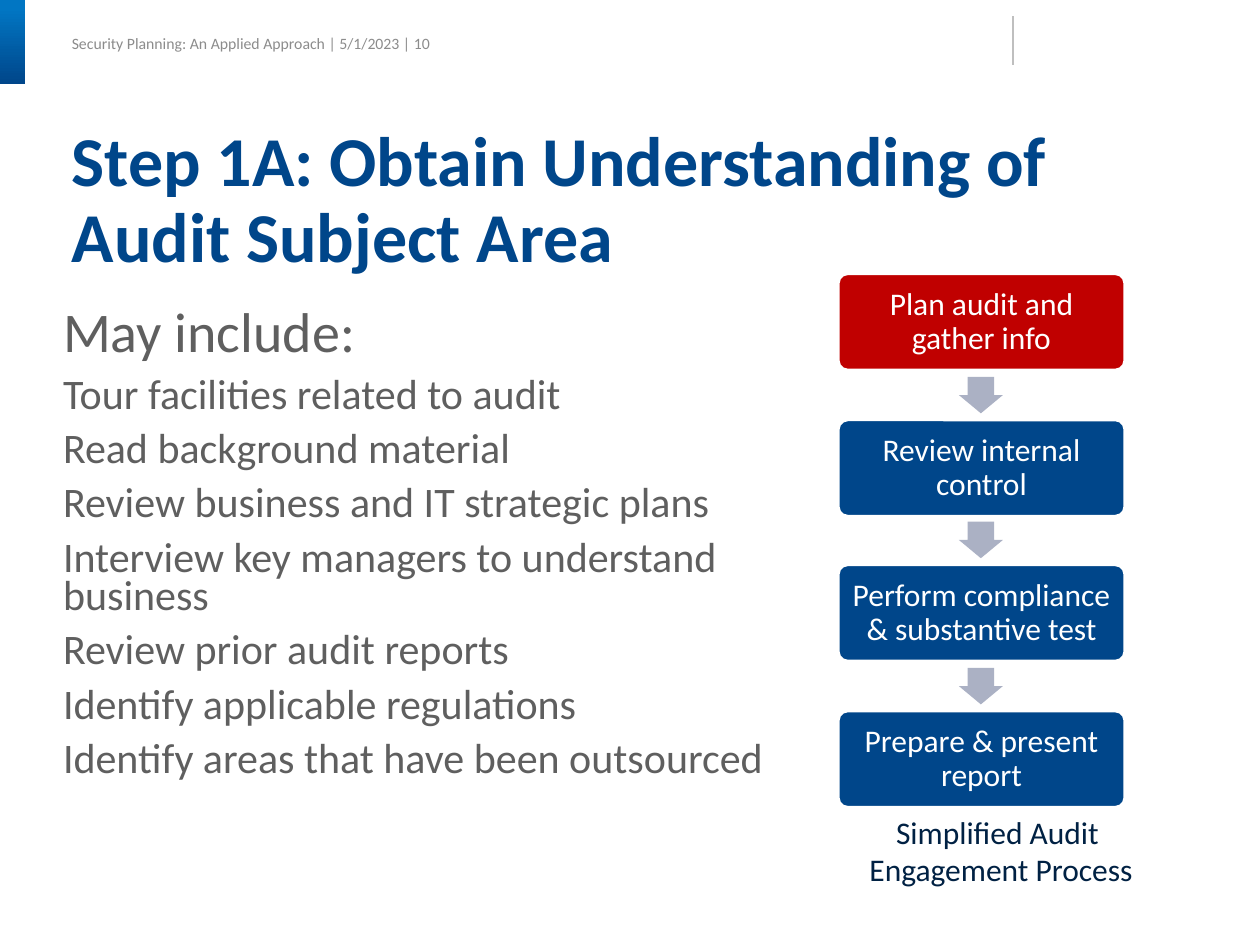
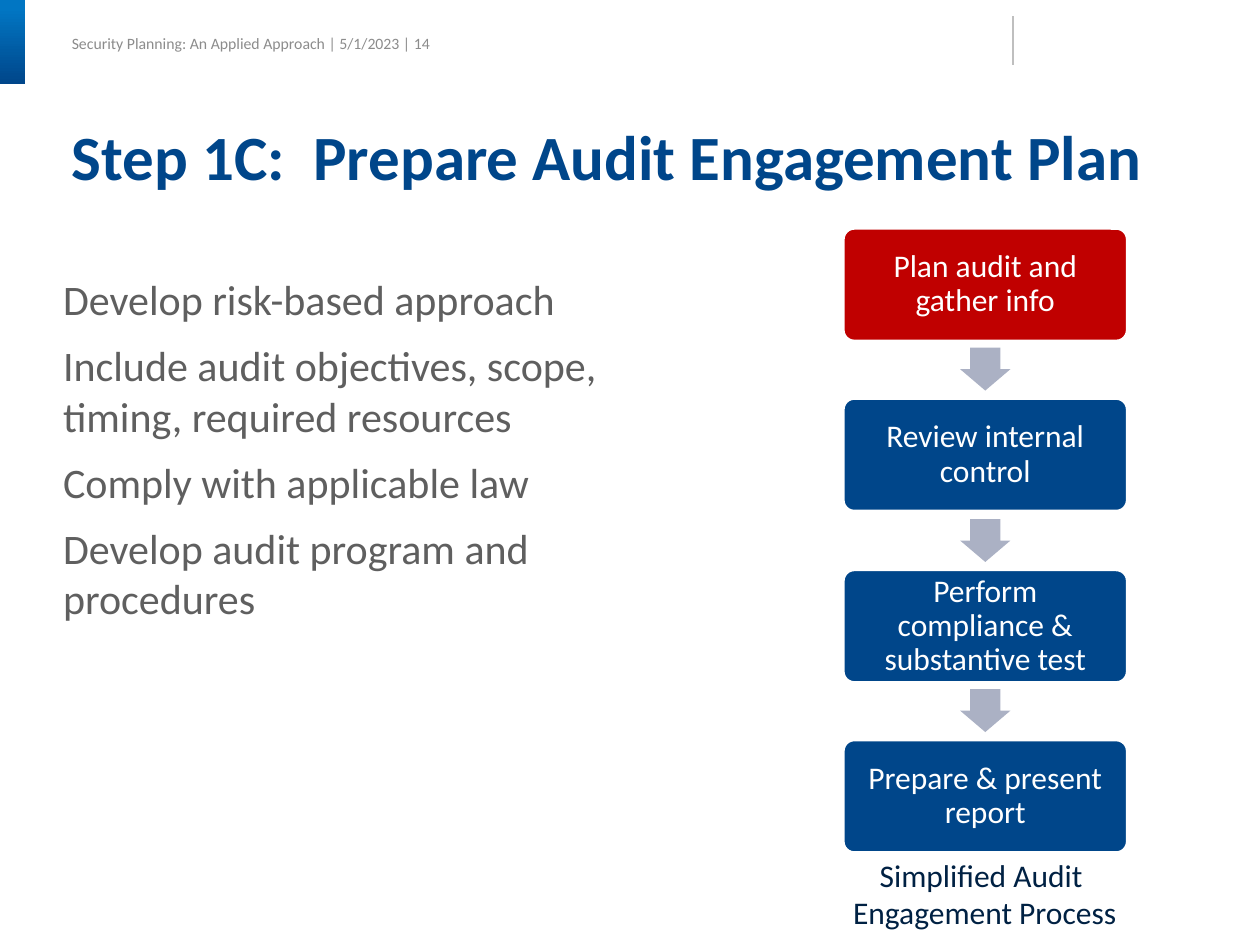
import dataclasses
import typing

import lxml.etree
import pptx
import pptx.dml.color
import pptx.enum.shapes
import pptx.enum.text
import pptx.oxml.ns
import pptx.slide
import pptx.text.text
import pptx.util

PX = 9144
FONT = "Calibri"
NAVY = "00468A"
SKY = "0176C3"
RED = "C00000"
STEEL = "ABB1C4"
GREY = "5F5F5F"
PALE = "8C8C8C"
RULE = "BFBFBF"
INK = "002143"
WHITE = "FFFFFF"
STEPS = (
    "Plan audit and gather info",
    "Review internal control",
    "Perform compliance & substantive test",
    "Prepare & present report",
)
KIND = pptx.enum.shapes.MSO_SHAPE
ALIGN = pptx.enum.text.PP_ALIGN
ANCHOR = pptx.enum.text.MSO_ANCHOR


class Box(typing.NamedTuple):
    left: int
    top: int
    width: int
    height: int

    def emu(self) -> list[int]:
        return [side * PX for side in self]


@dataclasses.dataclass(frozen=True)
class Flow:
    first: Box
    last: int
    label: Box


@dataclasses.dataclass(frozen=True)
class Page:
    number: int
    title: str
    size: int
    body: Box
    points: tuple[str, ...]
    flow: Flow
    lead: int = 24
    pitch: int | None = None


PAGES = (
    Page(
        10,
        "Step 1A: Obtain Understanding of Audit Subject Area",
        40,
        Box(50, 258, 558, 383),
        (
            "May include:",
            "Tour facilities related to audit",
            "Read background material",
            "Review business and IT strategic plans",
            "Interview key managers to understand business",
            "Review prior audit reports",
            "Identify applicable regulations",
            "Identify areas that have been outsourced",
        ),
        Flow(Box(665, 217, 228, 77), 564, Box(607, 645, 375, 100)),
        lead=32,
        pitch=22,
    ),
    Page(
        14,
        "Step 1C:  Prepare Audit Engagement Plan",
        36,
        Box(50, 217, 442, 425),
        (
            "Develop risk-based approach",
            "Include audit objectives, scope, timing, required resources",
            "Comply with applicable law",
            "Develop audit program and procedures",
        ),
        Flow(Box(669, 181, 226, 90), 587, Box(594, 679, 375, 100)),
    ),
)


def tint(code: str) -> pptx.dml.color.RGBColor:
    return pptx.dml.color.RGBColor.from_string(code)


def write(
    frame: pptx.text.text.TextFrame,
    *lines: str,
    size: int,
    color: str,
    lead: int | None = None,
    bold: bool = False,
    align: ALIGN = ALIGN.LEFT,
    anchor: ANCHOR = ANCHOR.TOP,
    inset: int = 0,
    wrap: bool = True,
    pitch: float | pptx.util.Pt | None = None,
    before: int = 0,
) -> None:
    frame.auto_size = pptx.enum.text.MSO_AUTO_SIZE.NONE
    frame.word_wrap = wrap
    frame.vertical_anchor = anchor
    frame.margin_left = frame.margin_right = inset * PX
    frame.margin_top = frame.margin_bottom = inset * PX
    for index, line in enumerate(lines):
        para = frame.add_paragraph() if index else frame.paragraphs[0]
        para.alignment = align
        para.line_spacing = pitch
        para.space_before = pptx.util.Pt(before)
        run = para.add_run()
        run.text = line
        run.font.name = FONT
        run.font.size = pptx.util.Pt(size if index or lead is None else lead)
        run.font.bold = bold
        run.font.color.rgb = tint(color)


def add_text(slide: pptx.slide.Slide, box: Box, *lines: str, **style: typing.Any) -> None:
    write(slide.shapes.add_textbox(*box.emu()).text_frame, *lines, **style)


def add_form(slide: pptx.slide.Slide, kind: KIND, box: Box, fill: str):
    shape = slide.shapes.add_shape(kind, *box.emu())
    shape.shadow.inherit = False
    shape.fill.solid()
    shape.fill.fore_color.rgb = tint(fill)
    shape.line.fill.background()
    return shape


def add_head(slide: pptx.slide.Slide, number: int) -> None:
    add_text(
        slide,
        Box(57, 23, 284, 23),
        f"Security Planning: An Applied Approach | 5/1/2023 | {number}",
        size=9,
        color=PALE,
        anchor=ANCHOR.MIDDLE,
        wrap=False,
    )
    band = add_form(slide, KIND.RECTANGLE, Box(0, 0, 20, 67), NAVY)
    band.fill.gradient()
    band.fill.gradient_angle = 270
    for stop, place, code in zip(band.fill.gradient_stops, (0.1, 1), (SKY, NAVY)):
        stop.position = place
        stop.color.rgb = tint(code)
    rule = slide.shapes.add_connector(
        pptx.enum.shapes.MSO_CONNECTOR.STRAIGHT, 804 * PX, 13 * PX, 804 * PX, 52 * PX
    )
    rule.line.color.rgb = tint(RULE)
    rule.line.width = pptx.util.Pt(0.75)
    lxml.etree.SubElement(rule._element.spPr, pptx.oxml.ns.qn("a:effectLst"))


def add_flow(slide: pptx.slide.Slide, flow: Flow) -> None:
    left, top, width, height = flow.first
    pitch = (flow.last - top) / (len(STEPS) - 1)
    wide, tall = round(height * 0.45), round(height * 0.375)
    for index, step in enumerate(STEPS):
        y = round(top + index * pitch)
        card = add_form(
            slide,
            KIND.ROUNDED_RECTANGLE,
            Box(left, y, width, height),
            NAVY if index else RED,
        )
        card.adjustments[0] = 0.1
        card.line.color.rgb = tint(WHITE)
        card.line.width = pptx.util.Pt(2)
        write(
            card.text_frame,
            step,
            size=18,
            color=WHITE,
            align=ALIGN.CENTER,
            anchor=ANCHOR.MIDDLE,
            inset=9,
            pitch=0.9,
        )
        if index:
            mid = y - (pitch - height) / 2
            spot = Box(left + (width - wide) // 2, round(mid - tall / 2), wide, tall)
            arrow = add_form(slide, KIND.DOWN_ARROW, spot, STEEL)
            arrow.adjustments[0] = 0.6
            arrow.adjustments[1] = 0.5
    add_text(
        slide,
        flow.label,
        "Simplified Audit ",
        "Engagement Process",
        size=18,
        color=INK,
        align=ALIGN.CENTER,
        wrap=False,
    )


def add_page(deck, page: Page) -> None:
    slide = deck.slides.add_slide(deck.slide_layouts.get_by_name("Title Only"))
    add_head(slide, page.number)
    title = slide.shapes.title
    title.left, title.top, title.width, title.height = Box(57, 100, 892, 55).emu()
    write(title.text_frame, page.title, size=page.size, color=NAVY, bold=True, pitch=0.9)
    add_text(
        slide,
        page.body,
        *page.points,
        size=24,
        color=GREY,
        lead=page.lead,
        pitch=pptx.util.Pt(page.pitch) if page.pitch else None,
        before=9,
    )
    add_flow(slide, page.flow)


def main() -> None:
    deck = pptx.Presentation()
    deck.slide_width = 1000 * PX
    deck.slide_height = 750 * PX
    for page in PAGES:
        add_page(deck, page)
    deck.save("out.pptx")


if __name__ == "__main__":
    main()
